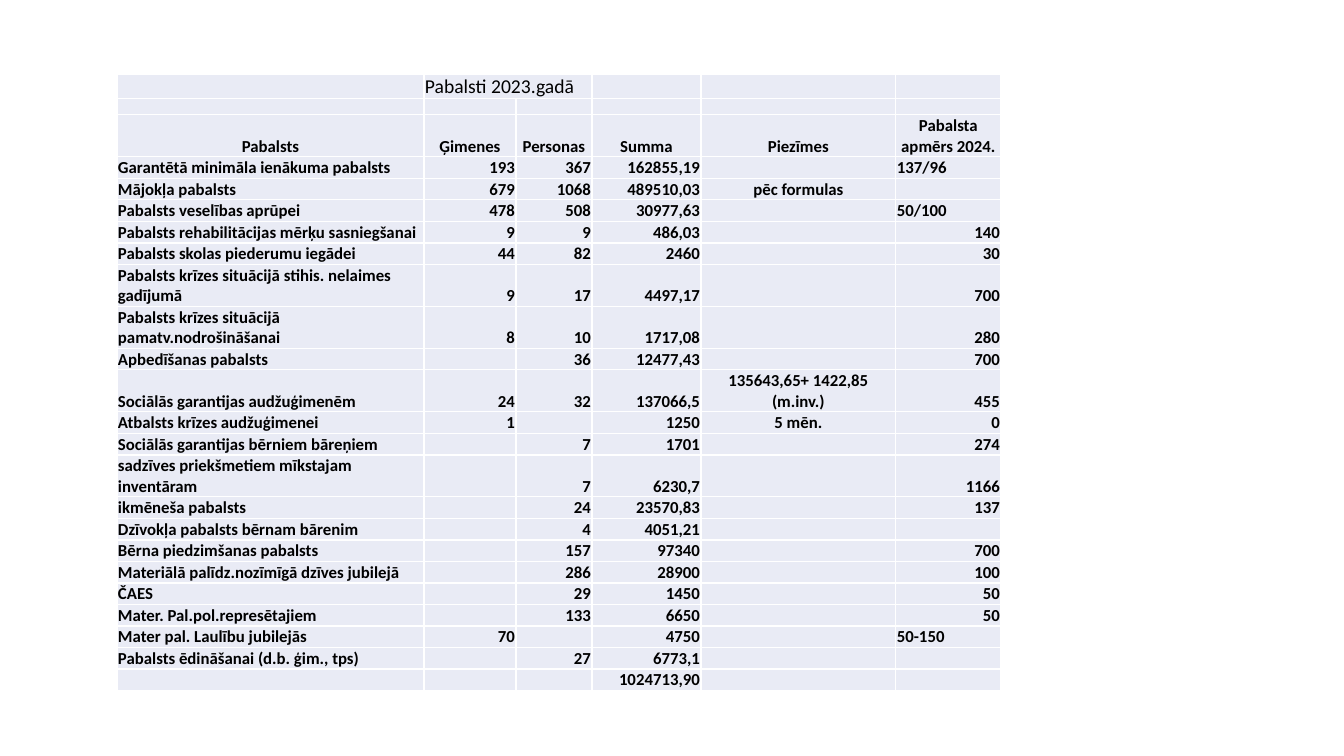
"""Build the slide with the table of social benefits paid in 2023."""
from dataclasses import astuple, dataclass

from lxml import etree
from pptx import Presentation
from pptx.dml.color import RGBColor
from pptx.enum.text import MSO_ANCHOR, PP_ALIGN
from pptx.oxml.ns import qn
from pptx.table import _Cell
from pptx.util import Emu, Pt

LEFT, CENTER, RIGHT = PP_ALIGN.LEFT, PP_ALIGN.CENTER, PP_ALIGN.RIGHT
BOTTOM = MSO_ANCHOR.BOTTOM
PX_PER_INCH = 100.8
FONT, BLACK, WHITE, PALE = "Calibri", "000000", "FFFFFF", "E9EBF5"
TABLE_LEFT, TABLE_TOP = 117, 74
COL_WIDTHS = [307, 92, 76, 109, 195, 105]
TITLE_H, GAP_H, ROW_H, TALL_H = 24, 16, 21, 42
BORDER_PT, EMPTY_PT = 1, 8
TITLE_FORMAT = {"name": FONT, "size": Pt(14), "bold": False}
BODY_FORMAT = {"name": FONT, "size": Pt(12), "bold": True}
COL_ALIGNS = [LEFT, RIGHT, RIGHT, RIGHT, CENTER, RIGHT]
CELL_FORMAT = {"vertical_anchor": BOTTOM, "margin_bottom": 0}


@dataclass
class Benefit:
    """One table row."""
    name: str = ""
    families: str = ""
    persons: str = ""
    total: str = ""
    note: str = ""
    rate: str = ""


TITLE = Benefit(families="Pabalsti 2023.gadā")
HEADER = Benefit("Pabalsts", "Ģimenes", "Personas", "Summa", "Piezīmes", "Pabalsta apmērs 2024.")
BENEFITS = [
    Benefit("Garantētā minimāla ienākuma pabalsts", "193", "367", "162855,19", rate="137/96"),
    Benefit("Mājokļa pabalsts", "679", "1068", "489510,03", "pēc formulas"),
    Benefit("Pabalsts veselības aprūpei", "478", "508", "30977,63", rate="50/100"),
    Benefit("Pabalsts rehabilitācijas mērķu sasniegšanai", "9", "9", "486,03", rate="140"),
    Benefit("Pabalsts skolas piederumu iegādei", "44", "82", "2460", rate="30"),
    Benefit("Pabalsts krīzes situācijā stihis. nelaimes gadījumā", "9", "17", "4497,17", rate="700"),
    Benefit("Pabalsts krīzes situācijā pamatv.nodrošināšanai", "8", "10", "1717,08", rate="280"),
    Benefit("Apbedīšanas pabalsts", "", "36", "12477,43", rate="700"),
    Benefit("Sociālās garantijas audžuģimenēm", "24", "32", "137066,5",
            "135643,65+ 1422,85 (m.inv.)", "455"),
    Benefit("Atbalsts krīzes audžuģimenei", "1", "", "1250", "5 mēn.", "0"),
    Benefit("Sociālās garantijas bērniem bāreņiem", "", "7", "1701", rate="274"),
    Benefit("sadzīves priekšmetiem mīkstajam inventāram", "", "7", "6230,7", rate="1166"),
    Benefit("ikmēneša pabalsts", "", "24", "23570,83", rate="137"),
    Benefit("Dzīvokļa pabalsts bērnam bārenim", "", "4", "4051,21"),
    Benefit("Bērna piedzimšanas pabalsts", "", "157", "97340", rate="700"),
    Benefit("Materiālā palīdz.nozīmīgā dzīves jubilejā", "", "286", "28900", rate="100"),
    Benefit("ČAES", "", "29", "1450", rate="50"),
    Benefit("Mater. Pal.pol.represētajiem", "", "133", "6650", rate="50"),
    Benefit("Mater pal. Laulību jubilejās", "70", "", "4750", rate="50-150"),
    Benefit("Pabalsts ēdināšanai (d.b. ģim., tps)", "", "27", "6773,1"),
    Benefit(total="1024713,90"),
]
ROWS = [TITLE, Benefit(), HEADER, *BENEFITS]


def px(value: int) -> Emu:
    """Turn whole pixels into EMU."""
    return Emu(round(value * 914400 / PX_PER_INCH))


def rgb(value: str) -> RGBColor:
    """Turn a hex string into a colour."""
    return RGBColor.from_string(value)


def row_height(row: Benefit) -> int:
    """Give the height that the row's text needs."""
    if row is TITLE:
        return TITLE_H
    if row == Benefit():
        return GAP_H
    tall = row is HEADER or len(row.name) > 43 or row.name.startswith("sadzīves") or len(row.note) > 20
    return TALL_H if tall else ROW_H


def alignment(row: Benefit, col: int, text: str) -> PP_ALIGN:
    """Choose the alignment of a cell."""
    if row is TITLE:
        return LEFT
    if row is HEADER:
        return CENTER
    return LEFT if "/" in text or "-" in text else COL_ALIGNS[col]


def style_cell(cell: _Cell) -> None:
    """Give a cell its borders, fill and margins."""
    tc_pr = cell._tc.get_or_add_tcPr()
    for side in "LRTB":
        ln = etree.SubElement(tc_pr, qn(f"a:ln{side}"), w=str(Pt(BORDER_PT)))
        fill = etree.SubElement(ln, qn("a:solidFill"))
        etree.SubElement(fill, qn("a:srgbClr"), val=WHITE)
    cell.fill.solid()
    cell.fill.fore_color.rgb = rgb(PALE)
    for side in ("left", "right", "top"):
        setattr(cell, f"margin_{side}", px(1))
    for key, value in CELL_FORMAT.items():
        setattr(cell, key, value)


def write_cell(cell: _Cell, text: str, align: PP_ALIGN, font_format: dict) -> None:
    """Write the text of a cell, or keep an empty cell low."""
    p = cell.text_frame.paragraphs[0]
    if not text:
        etree.SubElement(p._p, qn("a:endParaRPr"), sz=str(EMPTY_PT * 100))
        return
    p.alignment = align
    r = p.add_run()
    r.text = text
    for key, value in font_format.items():
        setattr(r.font, key, value)
    r.font.color.rgb = rgb(BLACK)


def main() -> None:
    """Build and save the slide."""
    prs = Presentation()
    prs.slide_width, prs.slide_height = px(1344), px(756)
    s = prs.slides.add_slide(prs.slide_layouts[6])
    heights = [row_height(row) for row in ROWS]
    table = s.shapes.add_table(len(ROWS), len(COL_WIDTHS), px(TABLE_LEFT), px(TABLE_TOP),
                               px(sum(COL_WIDTHS)), px(sum(heights))).table
    table.first_row = table.horz_banding = False
    for column, width in zip(table.columns, COL_WIDTHS):
        column.width = px(width)
    for i, (row, height) in enumerate(zip(ROWS, heights)):
        table.rows[i].height = px(height)
        font_format = TITLE_FORMAT if row is TITLE else BODY_FORMAT
        for col, text in enumerate(astuple(row)):
            cell = table.cell(i, col)
            style_cell(cell)
            write_cell(cell, text, alignment(row, col, text), font_format)
    table.cell(0, 1).merge(table.cell(0, 2))
    prs.save("out.pptx")


if __name__ == "__main__":
    main()
